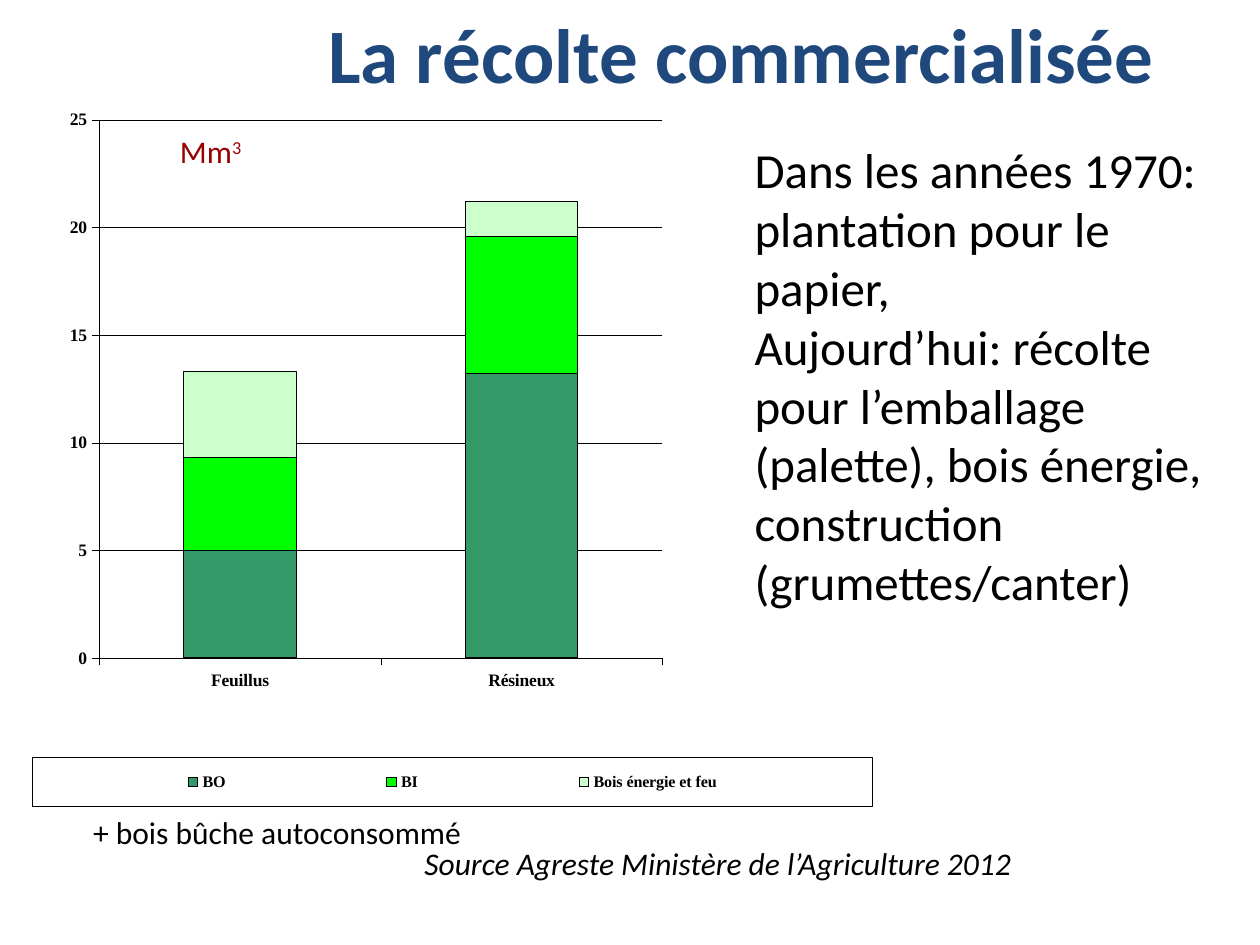
from dataclasses import dataclass

from lxml import etree
from pptx import Presentation
from pptx.chart.data import CategoryChartData
from pptx.dml.color import RGBColor
from pptx.enum.chart import XL_CHART_TYPE, XL_LEGEND_POSITION, XL_TICK_LABEL_POSITION, XL_TICK_MARK
from pptx.enum.text import MSO_ANCHOR, MSO_AUTO_SIZE, PP_ALIGN
from pptx.oxml import parse_xml
from pptx.oxml.ns import nsdecls, qn
from pptx.util import Inches, Pt

STACKED = XL_CHART_TYPE.COLUMN_STACKED
BOTTOM = XL_LEGEND_POSITION.BOTTOM
LOW = XL_TICK_LABEL_POSITION.LOW
OUTSIDE, NO_TICK = XL_TICK_MARK.OUTSIDE, XL_TICK_MARK.NONE
CENTER, MIDDLE = PP_ALIGN.CENTER, MSO_ANCHOR.MIDDLE
FIT_SHAPE, NO_FIT = MSO_AUTO_SIZE.SHAPE_TO_FIT_TEXT, MSO_AUTO_SIZE.NONE

SLIDE_W, SLIDE_H = Inches(10), Inches(7.5)
COLS, ROWS = 100, 75


@dataclass(frozen=True)
class Theme:
    text_font: str = "Calibri"
    chart_font: str = "Times New Roman"
    title: str = "1F497D"
    ink: str = "000000"
    unit: str = "990000"
    woods: tuple = ("339966", "00FF00", "CCFFCC")
    title_size: float = 44
    body_size: float = 28
    note_size: float = 18
    axis_size: float = 10
    legend_size: float = 9.2
    hairline: float = 0.16
    outline: float = 0.63


THEME = Theme()


def grid_box(col, row, cols, rows):
    return (int(SLIDE_W * col / COLS), int(SLIDE_H * row / ROWS),
            int(SLIDE_W * cols / COLS), int(SLIDE_H * rows / ROWS))


def format_font(font, color, **values):
    for name, value in values.items():
        setattr(font, name, value)
    font.color.rgb = RGBColor.from_string(color)


def format_line(line, width):
    line.color.rgb = RGBColor.from_string(THEME.ink)
    line.width = Pt(width)


def add_title(s, box, text):
    sp = s.shapes.title
    sp.left, sp.top, sp.width, sp.height = box
    tf = sp.text_frame
    tf.auto_size, tf.vertical_anchor = NO_FIT, MIDDLE
    p = tf.paragraphs[0]
    p.alignment = CENTER
    r = p.add_run()
    r.text = text
    format_font(r.font, THEME.title, name=THEME.text_font, size=Pt(THEME.title_size), bold=True)


def add_text(s, box, lines, size, color=THEME.ink, wrap=False, italic=False, superscript=None):
    tf = s.shapes.add_textbox(*box).text_frame
    tf.word_wrap, tf.auto_size = wrap, FIT_SHAPE
    for i, line in enumerate(lines):
        p = tf.paragraphs[0] if i == 0 else tf.add_paragraph()
        for text in filter(None, (line, superscript)):
            r = p.add_run()
            r.text = text
            format_font(r.font, color, name=THEME.text_font, size=Pt(size), italic=italic)
    if superscript:
        r.font._element.set("baseline", "30000")


def manual_layout(x, y, w, h, inner=False):
    layout = etree.Element(qn("c:layout"))
    manual = etree.SubElement(layout, qn("c:manualLayout"))
    values = {"layoutTarget": "inner"} if inner else {}
    values.update(xMode="edge", yMode="edge", x=x, y=y, w=w, h=h)
    for tag, value in values.items():
        etree.SubElement(manual, qn(f"c:{tag}")).set("val", str(value))
    return layout


def drop_layout(parent):
    for old in parent.findall(qn("c:layout")):
        parent.remove(old)


def format_axis(axis):
    axis.major_tick_mark, axis.minor_tick_mark = OUTSIDE, NO_TICK
    format_line(axis.format.line, THEME.hairline)
    format_font(axis.tick_labels.font, THEME.ink, name=THEME.chart_font,
                size=Pt(THEME.axis_size), bold=True)


def format_legend(chart):
    chart.has_legend = True
    legend = chart.legend
    legend.position, legend.include_in_layout = BOTTOM, False
    format_font(legend.font, THEME.ink, name=THEME.chart_font,
                size=Pt(THEME.legend_size), bold=True)
    element = legend._element
    drop_layout(element)
    element.find(qn("c:legendPos")).addnext(manual_layout(0, 0.92, 1, 0.07))
    frame = parse_xml(
        f'<c:spPr {nsdecls("c", "a")}><a:noFill/><a:ln w="{Pt(THEME.outline)}"><a:solidFill>'
        f'<a:srgbClr val="{THEME.ink}"/></a:solidFill></a:ln></c:spPr>')
    element.find(qn("c:overlay")).addnext(frame)


def add_harvest_chart(s, box, categories, harvest):
    data = CategoryChartData(number_format="General")
    data.categories = categories
    for name, values in harvest.items():
        data.add_series(name, values)
    chart = s.shapes.add_chart(STACKED, *box, data).chart
    chart.has_title = False
    format_font(chart.font, THEME.ink, name=THEME.chart_font, size=Pt(THEME.axis_size), bold=True)

    plot = chart.plots[0]
    plot.gap_width, plot.overlap, plot.vary_by_categories = 150, 100, False
    for series, color in zip(plot.series, THEME.woods):
        series.format.fill.solid()
        series.format.fill.fore_color.rgb = RGBColor.from_string(color)
        format_line(series.format.line, THEME.outline)

    for axis in (chart.category_axis, chart.value_axis):
        format_axis(axis)
    chart.category_axis.tick_label_position = LOW
    values_axis = chart.value_axis
    values_axis.minimum_scale, values_axis.maximum_scale, values_axis.major_unit = 0, 25, 5
    format_line(values_axis.major_gridlines.format.line, THEME.hairline)

    area = chart._chartSpace.chart.plotArea
    drop_layout(area)
    area.insert(0, manual_layout(0.08, 0.02, 0.67, 0.76, inner=True))
    format_legend(chart)


def build_harvest_slide(prs):
    s = prs.slides.add_slide(prs.slide_layouts[5])
    add_title(s, grid_box(17.7, 0, 82.3, 8.4), "La récolte commercialisée")
    add_text(s, grid_box(32.7, 66.5, 49.8, 4),
             ["Source Agreste Ministère de l’Agriculture 2012"], THEME.note_size, italic=True)
    add_harvest_chart(s, grid_box(2.5, 8.4, 66.8, 56.2), ["Feuillus", "Résineux"], {
        "BO": (5, 13.2),
        "BI": (4.3, 6.4),
        "Bois énergie et feu": (4, 1.6),
    })
    add_text(s, grid_box(13.3, 10, 8.8, 5), ["Mm"], THEME.note_size, THEME.unit, superscript="3")
    add_text(s, grid_box(6.4, 64, 40.4, 5), ["+ bois bûche autoconsommé"], THEME.note_size)
    add_text(s, grid_box(58.9, 10.6, 38.6, 38.7), [
        "Dans les années 1970: plantation pour le papier,",
        "Aujourd’hui: récolte pour l’emballage (palette), bois énergie, "
        "construction (grumettes/canter)",
    ], THEME.body_size, wrap=True)


def main():
    prs = Presentation()
    prs.slide_width, prs.slide_height = SLIDE_W, SLIDE_H
    build_harvest_slide(prs)
    prs.save("out.pptx")


if __name__ == "__main__":
    main()
